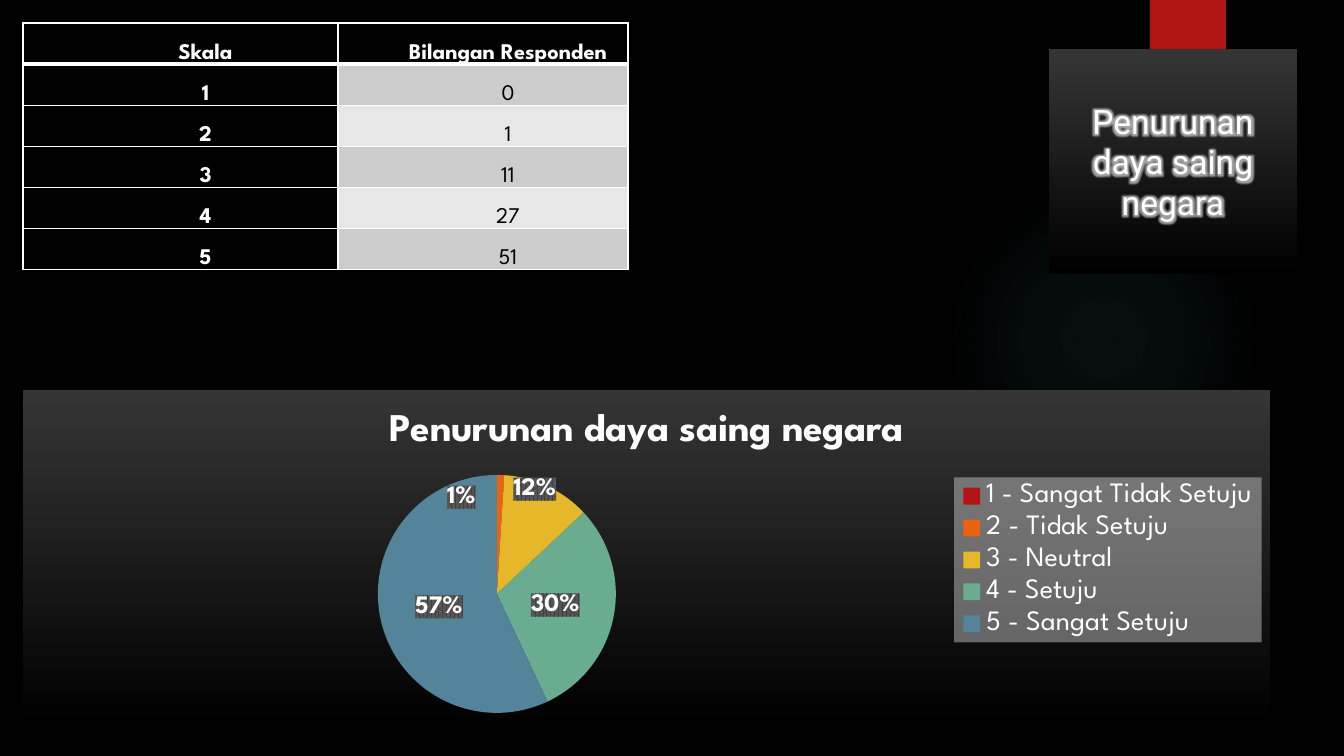
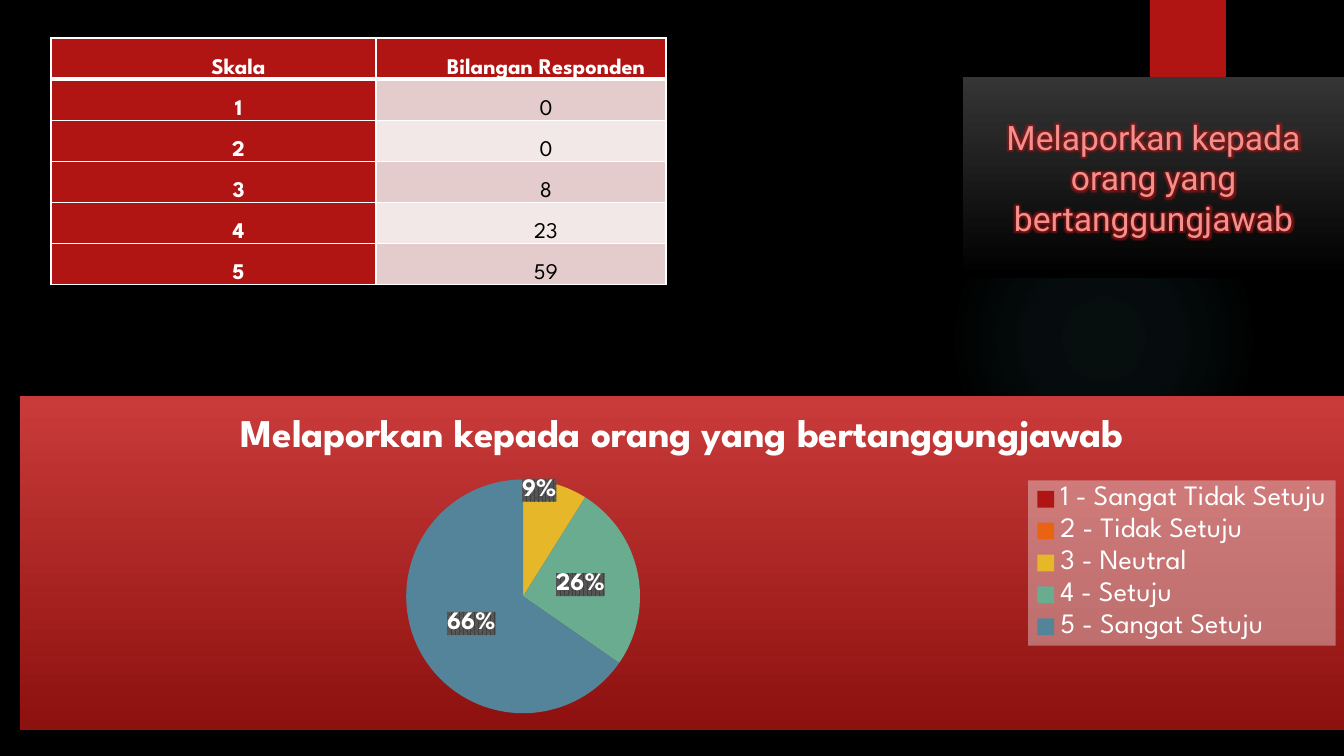
from copy import deepcopy

from lxml import etree
from pptx import Presentation
from pptx.chart.data import CategoryChartData
from pptx.dml.color import RGBColor
from pptx.enum.chart import XL_CHART_TYPE, XL_LABEL_POSITION, XL_LEGEND_POSITION
from pptx.enum.shapes import MSO_SHAPE
from pptx.enum.text import MSO_ANCHOR, PP_ALIGN
from pptx.oxml import parse_xml
from pptx.oxml.ns import nsdecls, qn
from pptx.util import Pt

PIE = XL_CHART_TYPE.PIE
LABEL_CENTER = XL_LABEL_POSITION.CENTER
LEGEND_RIGHT = XL_LEGEND_POSITION.RIGHT
RECTANGLE, OVAL = MSO_SHAPE.RECTANGLE, MSO_SHAPE.OVAL
MIDDLE, CENTER = MSO_ANCHOR.MIDDLE, PP_ALIGN.CENTER

SLIDE_WIDTH, SLIDE_HEIGHT = 1344, 756
SCALE = 12192000 / SLIDE_WIDTH

BLACK = RGBColor(0x00, 0x00, 0x00)
WHITE = RGBColor(0xFF, 0xFF, 0xFF)
RED = RGBColor(0xB0, 0x15, 0x13)
CHARCOAL = RGBColor(0x35, 0x35, 0x35)
BRIGHT_RED = RGBColor(0xC9, 0x3B, 0x3A)
DARK_RED = RGBColor(0x8D, 0x11, 0x0F)
SALMON = RGBColor(0xF3, 0x8F, 0x8D)
TEAL = RGBColor(0x50, 0xB9, 0xC1)
GREY_BAND = RGBColor(0xCC, 0xCC, 0xCC)
PALE_GREY_BAND = RGBColor(0xE7, 0xE7, 0xE7)
PINK_BAND = RGBColor(0xE4, 0xCC, 0xCC)
PALE_PINK_BAND = RGBColor(0xF2, 0xE8, 0xE7)
LABEL_DARK = RGBColor(0x40, 0x40, 0x40)
LABEL_LIGHT = RGBColor(0x59, 0x59, 0x59)
LEGEND_FILL = RGBColor(0xF2, 0xF2, 0xF2)
SLICE_COLORS = [
    RED,
    RGBColor(0xEA, 0x63, 0x12),
    RGBColor(0xE6, 0xB7, 0x29),
    RGBColor(0x6A, 0xAC, 0x90),
    RGBColor(0x54, 0x84, 0x9A),
]

BODY_FONT, TITLE_FONT = "League Spartan", "Roboto"
SCALE_NAMES = ["Sangat Tidak Setuju", "Tidak Setuju", "Neutral", "Setuju", "Sangat Setuju"]
ROW_HEIGHT = 41

SURVEY_SLIDES = [
    {
        "title": "Penurunan daya saing negara",
        "counts": [0, 1, 11, 27, 51],
        "title_box": (1049, 49, 248, 225),
        "title_color": WHITE,
        "glow": WHITE,
        "table_at": (23, 23),
        "columns": (315, 290),
        "table_colors": (BLACK, GREY_BAND, PALE_GREY_BAND),
        "chart_box": (23, 390, 1247, 340),
        "chart_fill": (CHARCOAL, BLACK),
        "label_shifts": {1: (-0.03, -0.11), 2: (0.01, -0.15)},
    },
    {
        "title": "Melaporkan kepada orang yang bertanggungjawab",
        "counts": [0, 0, 8, 23, 59],
        "title_box": (963, 77, 381, 201),
        "title_color": SALMON,
        "glow": RED,
        "table_at": (51, 38),
        "columns": (325, 290),
        "table_colors": (RED, PINK_BAND, PALE_PINK_BAND),
        "chart_box": (20, 396, 1324, 334),
        "chart_fill": (BRIGHT_RED, DARK_RED),
        "label_shifts": {2: (0, -0.15)},
    },
]


def px(*lengths):
    return [round(length * SCALE) for length in lengths]


def color_xml(color, alpha=100):
    return f'<a:srgbClr val="{color}"><a:alpha val="{alpha * 1000}"/></a:srgbClr>'


def gradient(stops, direction='<a:lin ang="5400000" scaled="0"/>'):
    """Gradient fill from (position, colour, alpha) stops, top to bottom by default."""
    marks = "".join(
        f'<a:gs pos="{position * 1000}">{color_xml(color, alpha)}</a:gs>'
        for position, color, alpha in stops
    )
    return parse_xml(
        f'<a:gradFill {nsdecls("a")} rotWithShape="1"><a:gsLst>{marks}</a:gsLst>{direction}</a:gradFill>'
    )


def two_tone(top, bottom):
    return gradient([(0, top, 100), (100, bottom, 100)])


def chart_properties(fill):
    properties = parse_xml(f'<c:spPr {nsdecls("c", "a")}><a:ln><a:noFill/></a:ln></c:spPr>')
    properties.insert(0, fill)
    return properties


def manual_layout(**values):
    entries = "".join(f'<c:{name} val="{value}"/>' for name, value in values.items())
    return parse_xml(
        f'<c:layout {nsdecls("c")}><c:manualLayout>{entries}</c:manualLayout></c:layout>'
    )


def add_plain_shape(slide, preset, box, fill):
    """Shape without line or shadow; fill is a colour or a gradient element."""
    shape = slide.shapes.add_shape(preset, *px(*box))
    shape.shadow.inherit = False
    shape.line.fill.background()
    if isinstance(fill, RGBColor):
        shape.fill.solid()
        shape.fill.fore_color.rgb = fill
    else:
        shape._element.spPr.find(qn("a:prstGeom")).addnext(fill)
    return shape


def add_backdrop(slide):
    slide.background.fill.solid()
    slide.background.fill.fore_color.rgb = BLACK
    radial = (
        '<a:path path="circle"><a:fillToRect l="50000" t="50000" r="50000" b="50000"/></a:path>'
    )
    halo = gradient([(0, TEAL, 7), (36, TEAL, 6), (69, TEAL, 0)], radial)
    add_plain_shape(slide, OVAL, (949, 184, 310, 310), halo)
    add_plain_shape(slide, RECTANGLE, (1150, 0, 76, 126), RED)


def add_title(slide, box, title, color, glow):
    shape = add_plain_shape(slide, RECTANGLE, box, two_tone(CHARCOAL, BLACK))
    frame = shape.text_frame
    frame.word_wrap = True
    frame.vertical_anchor = MIDDLE
    frame.text = title
    paragraph = frame.paragraphs[0]
    paragraph.alignment = CENTER
    font = paragraph.runs[0].font
    font.size = Pt(24)
    font.name = TITLE_FONT
    font.color.rgb = color
    # Glow follows the text fill
    paragraph.runs[0]._r.rPr.find(qn("a:solidFill")).addnext(parse_xml(
        f'<a:effectLst {nsdecls("a")}><a:glow rad="{Pt(8)}">{color_xml(glow, 60)}</a:glow></a:effectLst>'
    ))


def set_borders(cell, widths):
    properties = cell._tc.get_or_add_tcPr()
    for index, (side, width) in enumerate(widths.items()):
        properties.insert(index, parse_xml(
            f'<a:ln{side} {nsdecls("a")} w="{Pt(width)}"><a:solidFill>'
            f'{color_xml(WHITE)}</a:solidFill></a:ln{side}>'
        ))


def format_cell(cell, text, fill, color, bold, widths):
    cell.margin_left = cell.margin_right = px(7)[0]
    cell.margin_top = cell.margin_bottom = 0
    cell.fill.solid()
    cell.fill.fore_color.rgb = fill
    set_borders(cell, widths)
    cell.text_frame.text = text
    paragraph = cell.text_frame.paragraphs[0]
    paragraph._p.get_or_add_pPr().set("marL", str(px(50)[0]))
    paragraph.alignment = CENTER
    paragraph.line_spacing = 2.0
    font = paragraph.runs[0].font
    font.size = Pt(16)
    font.name = BODY_FONT
    font.bold = bold
    font.color.rgb = color


def add_count_table(slide, position, columns, counts, colors):
    dark, *bands = colors
    rows = [("Skala", "Bilangan Responden")]
    rows += [(str(step), str(count)) for step, count in enumerate(counts, 1)]
    size = (sum(columns), ROW_HEIGHT * len(rows))
    table = slide.shapes.add_table(len(rows), len(columns), *px(*position, *size)).table
    for column, width in zip(table.columns, columns):
        column.width = px(width)[0]
    for row_index, row in enumerate(rows):
        table.rows[row_index].height = px(ROW_HEIGHT)[0]
        widths = {
            "L": 1,
            "R": 1,
            "T": 3 if row_index == 1 else 1,
            "B": 3 if row_index == 0 else 1,
        }
        for column_index, text in enumerate(row):
            heading = row_index == 0 or column_index == 0
            fill = dark if heading else bands[(row_index - 1) % 2]
            color = WHITE if heading else BLACK
            format_cell(table.cell(row_index, column_index), text, fill, color, heading, widths)


def set_font(font, size, bold=False):
    font.size = Pt(size)
    font.name = BODY_FONT
    font.bold = bold
    font.color.rgb = WHITE


def format_labels(plot, percents, shifts):
    plot.has_data_labels = True
    labels = plot.data_labels
    labels.show_value = True
    labels.show_percentage = False
    labels.number_format = '0"%"'
    labels.number_format_is_linked = False
    labels.position = LABEL_CENTER
    set_font(labels.font, 18, True)
    element = labels._element
    pattern = parse_xml(
        f'<a:pattFill {nsdecls("a")} prst="pct75"><a:fgClr>{color_xml(LABEL_DARK)}</a:fgClr>'
        f'<a:bgClr>{color_xml(LABEL_LIGHT)}</a:bgClr></a:pattFill>'
    )
    element.find(qn("c:txPr")).addprevious(chart_properties(pattern))
    # Hide the labels of empty slices and move those of narrow ones
    shared = [child for child in element if child.tag != qn("c:showLeaderLines")]
    special = [index for index, value in enumerate(percents) if value == 0 or index in shifts]
    for place, index in enumerate(special):
        label = parse_xml(f'<c:dLbl {nsdecls("c")}><c:idx val="{index}"/></c:dLbl>')
        if index in shifts:
            x, y = shifts[index]
            label.append(manual_layout(x=x, y=y))
            label.extend(deepcopy(shared))
        else:
            etree.SubElement(label, qn("c:delete")).set("val", "1")
        element.insert(place, label)


def add_pie(slide, box, title, counts, fill, shifts):
    percents = [round(100 * count / sum(counts)) for count in counts]
    data = CategoryChartData()
    data.categories = [f"{step} - {name}" for step, name in enumerate(SCALE_NAMES, 1)]
    data.add_series("Series 1", percents)
    chart = slide.shapes.add_chart(PIE, *px(*box), data).chart
    set_font(chart.font, 10)
    chart._chartSpace.find(qn("c:txPr")).addprevious(chart_properties(two_tone(*fill)))

    # Title
    chart.has_title = True
    chart.chart_title.include_in_layout = False
    chart.chart_title.text_frame.text = title
    set_font(chart.chart_title.text_frame.paragraphs[0].runs[0].font, 28, True)

    # Legend
    chart.has_legend = True
    legend = chart.legend
    legend.position = LEGEND_RIGHT
    legend.include_in_layout = False
    set_font(legend.font, 20)
    veil = parse_xml(f'<a:solidFill {nsdecls("a")}>{color_xml(LEGEND_FILL, 39)}</a:solidFill>')
    legend._element.find(qn("c:txPr")).addprevious(chart_properties(veil))

    # Slices
    plot = chart.plots[0]
    plot.vary_by_categories = True
    for index, color in enumerate(SLICE_COLORS):
        slice_fill = plot.series[0].points[index].format.fill
        slice_fill.solid()
        slice_fill.fore_color.rgb = color
    format_labels(plot, percents, shifts)

    # Plot area
    area = chart._chartSpace.chart.plotArea
    for layout in area.findall(qn("c:layout")):
        area.remove(layout)
    area.insert(0, manual_layout(
        layoutTarget="inner", xMode="edge", yMode="edge", x=0.03, y=0.25, w=0.7, h=0.7
    ))


def add_survey_slide(presentation, survey):
    slide = presentation.slides.add_slide(presentation.slide_layouts[6])
    title, counts = survey["title"], survey["counts"]
    add_backdrop(slide)
    add_count_table(slide, survey["table_at"], survey["columns"], counts, survey["table_colors"])
    add_pie(slide, survey["chart_box"], title, counts, survey["chart_fill"], survey["label_shifts"])
    add_title(slide, survey["title_box"], title, survey["title_color"], survey["glow"])


def main():
    presentation = Presentation()
    presentation.slide_width, presentation.slide_height = px(SLIDE_WIDTH, SLIDE_HEIGHT)
    for survey in SURVEY_SLIDES:
        add_survey_slide(presentation, survey)
    presentation.save("out.pptx")


if __name__ == "__main__":
    main()
